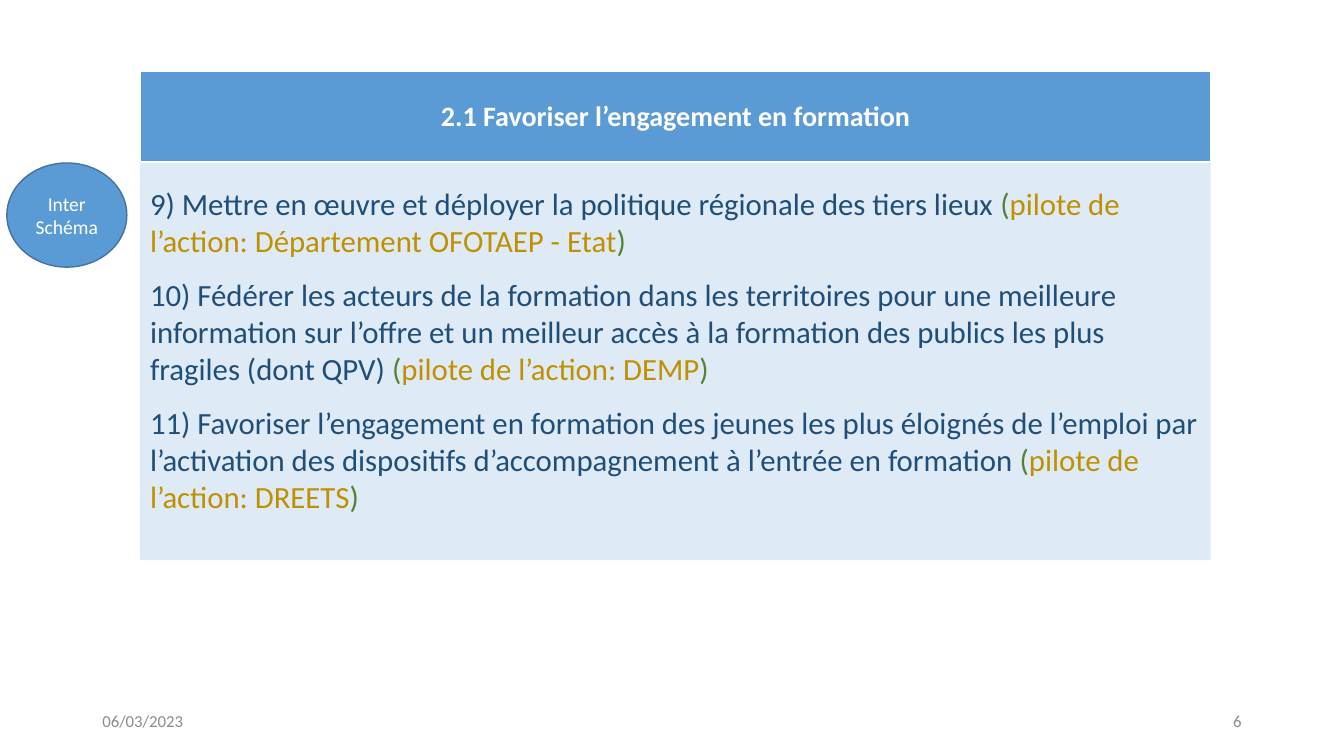
"""Build the slide on action line 2.1, engagement in training."""
from lxml import etree
from pptx import Presentation
from pptx.dml.color import RGBColor
from pptx.enum.shapes import MSO_SHAPE
from pptx.enum.text import MSO_ANCHOR, PP_ALIGN
from pptx.oxml.ns import qn
from pptx.util import Pt

LEFT, CENTER, RIGHT = PP_ALIGN.LEFT, PP_ALIGN.CENTER, PP_ALIGN.RIGHT
MIDDLE, TOP = MSO_ANCHOR.MIDDLE, MSO_ANCHOR.TOP
RECT, OVAL = MSO_SHAPE.RECTANGLE, MSO_SHAPE.OVAL
FONT = "Calibri"
COLORS = {
    "white": "FFFFFF", "blue": "5B9BD5", "outline": "43739E", "pale": "DEEBF7",
    "navy": "1F4E79", "green": "548235", "gold": "BF9000", "grey": "8C8C8C",
}
BORDERS = {"lnL": 1, "lnR": 1, "lnT": 1, "lnB": 3}
ACTIONS = [
    ("9) Mettre en œuvre et déployer la politique régionale des tiers lieux ",
     "Département OFOTAEP - Etat"),
    ("10) Fédérer les acteurs de la formation dans les territoires pour une "
     "meilleure information sur l’offre et un meilleur accès à la formation "
     "des publics les plus fragiles (dont QPV) ", "DEMP"),
    ("11) Favoriser l’engagement en formation des jeunes les plus éloignés de "
     "l’emploi par l’activation des dispositifs d’accompagnement à l’entrée "
     "en formation ", "DREETS"),
]


def rgb(name):
    return RGBColor.from_string(COLORS[name])


def paint(fill, color):
    fill.solid()
    fill.fore_color.rgb = rgb(color)


def set_font(p, size, color, align=LEFT, bold=False):
    p.alignment = align
    p.font.name = FONT
    p.font.size = Pt(size)
    p.font.bold = bold
    p.font.color.rgb = rgb(color)


def write(tf, lines, size, color, align):
    tf.word_wrap = True
    tf.vertical_anchor = MIDDLE
    for i, line in enumerate(lines):
        p = tf.add_paragraph() if i else tf.paragraphs[0]
        p.text = line
        set_font(p, size, color, align)


def add_heading(s, text, left, top, width, height):
    table = s.shapes.add_table(
        1, 1, Pt(left), Pt(top), Pt(width), Pt(height)).table
    cell = table.cell(0, 0)
    cell.text = text
    cell.vertical_anchor = MIDDLE
    set_font(cell.text_frame.paragraphs[0], 20, "white", CENTER, True)
    tcPr = cell._tc.get_or_add_tcPr()
    for tag, weight in BORDERS.items():
        ln = etree.SubElement(tcPr, qn(f"a:{tag}"), w=str(Pt(weight)))
        fill = etree.SubElement(ln, qn("a:solidFill"))
        etree.SubElement(fill, qn("a:srgbClr"), val=COLORS["white"])
    paint(cell.fill, "blue")


def add_shape(s, kind, left, top, width, height, fill, line=None):
    sp = s.shapes.add_shape(kind, Pt(left), Pt(top), Pt(width), Pt(height))
    sp.shadow.inherit = False
    paint(sp.fill, fill)
    if line:
        sp.line.color.rgb = rgb(line)
        sp.line.width = Pt(1)
    else:
        sp.line.fill.background()
    return sp


def add_actions(s, left, top, width, height):
    tf = add_shape(s, RECT, left, top, width, height, "pale").text_frame
    tf.word_wrap = True
    tf.vertical_anchor = TOP
    tf.margin_top = Pt(15.8)
    for i, (action, pilot) in enumerate(ACTIONS):
        p = tf.add_paragraph() if i else tf.paragraphs[0]
        set_font(p, 22, "navy")
        if i:
            p.space_before = Pt(12.2)
        for text, color in [(action, "navy"), ("(", "green"),
                            (f"pilote de l’action: {pilot}", "gold"),
                            (")", "green")]:
            r = p.add_run()
            r.text = text
            r.font.color.rgb = rgb(color)


def add_footer(s, text, left, align):
    tb = s.shapes.add_textbox(Pt(left), Pt(500.5), Pt(216), Pt(28.75))
    write(tb.text_frame, [text], 12, "grey", align)


def main():
    prs = Presentation()
    prs.slide_width, prs.slide_height = Pt(960), Pt(540)
    s = prs.slides.add_slide(prs.slide_layouts[6])
    add_heading(s, "2.1 Favoriser l’engagement en formation",
                100.4, 50.8, 764.4, 65.5)
    add_footer(s, "6", 678, RIGHT)
    add_footer(s, "06/03/2023", 66, LEFT)
    add_actions(s, 100.1, 116.4, 764.6, 283.7)
    badge = add_shape(s, OVAL, 4.9, 116.4, 85.7, 74.4, "blue", "outline")
    write(badge.text_frame, ["Inter", "Schéma"], 14, "white", CENTER)
    prs.save("out.pptx")


if __name__ == "__main__":
    main()
